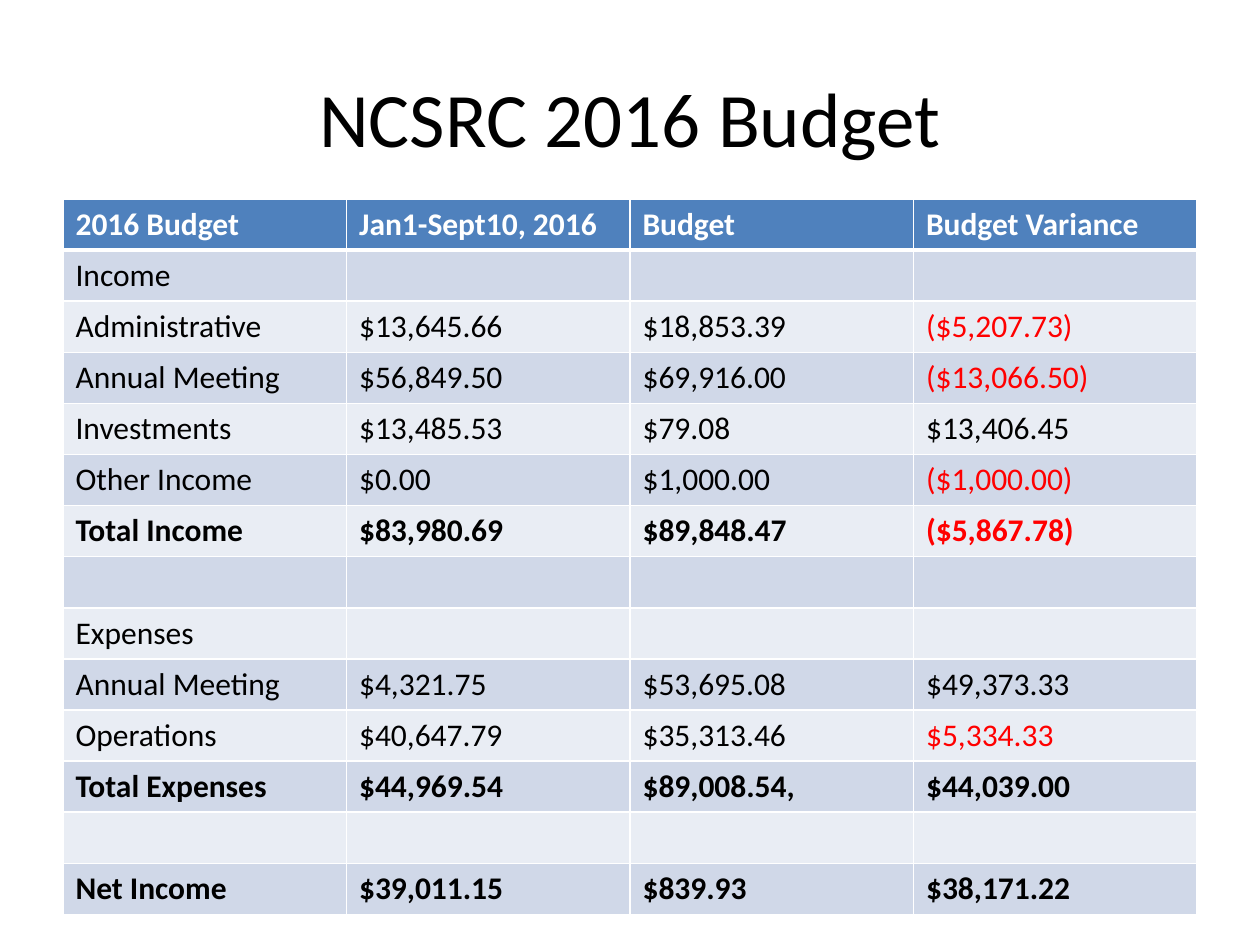
from lxml.etree import SubElement
from pptx import Presentation
from pptx.dml.color import RGBColor
from pptx.enum.text import MSO_ANCHOR, PP_ALIGN
from pptx.oxml.ns import qn
from pptx.util import Emu, Pt

COLORS = {
    "header": "4F81BD",
    "dark_band": "D0D8E8",
    "light_band": "E9EDF4",
    "white": "FFFFFF",
    "black": "000000",
    "red": "FF0000",
}
FONT = "Calibri"
BUDGET = [
    ["2016 Budget", "Jan1-Sept10, 2016", "Budget", "Budget Variance"],
    ["Income", "", "", ""],
    ["Administrative", "$13,645.66", "$18,853.39", "($5,207.73)"],
    ["Annual Meeting", "$56,849.50", "$69,916.00", "($13,066.50)"],
    ["Investments", "$13,485.53", "$79.08", "$13,406.45"],
    ["Other Income", "$0.00", "$1,000.00", "($1,000.00)"],
    ["Total Income", "$83,980.69", "$89,848.47", "($5,867.78)"],
    ["", "", "", ""],
    ["Expenses", "", "", ""],
    ["Annual Meeting", "$4,321.75", "$53,695.08", "$49,373.33"],
    ["Operations", "$40,647.79", "$35,313.46", "$5,334.33"],
    ["Total Expenses", "$44,969.54", "$89,008.54,", "$44,039.00"],
    ["", "", "", ""],
    ["Net Income", "$39,011.15", "$839.93", "$38,171.22"],
]
BOLD_ROWS = ("2016 Budget", "Total Income", "Total Expenses", "Net Income")
OVERSPENT = "$5,334.33"  # red although it has no parentheses


def px(*lengths):
    return [Emu(round(length * 914400 / 126)) for length in lengths]


def add_border(cell, side, points):
    line = SubElement(cell._tc.get_or_add_tcPr(), qn(f"a:ln{side}"), w=str(Pt(points)))
    fill = SubElement(line, qn("a:solidFill"))
    SubElement(fill, qn("a:srgbClr"), val=COLORS["white"])


deck = Presentation()
deck.slide_width, deck.slide_height = px(1260, 945)
page = deck.slides.add_slide(deck.slide_layouts[5])

# Title
title = page.shapes.title
title.left, title.top, title.width, title.height = px(63, 38, 1134, 158)
title.text_frame.text = "NCSRC 2016 Budget"
title.text_frame.vertical_anchor = MSO_ANCHOR.MIDDLE
para = title.text_frame.paragraphs[0]
para.alignment = PP_ALIGN.CENTER
font = para.runs[0].font
font.name, font.size = FONT, Pt(44)
font.color.rgb = RGBColor.from_string(COLORS["black"])

# Budget table: equal columns and rows
table = page.shapes.add_table(len(BUDGET), len(BUDGET[0]), *px(63, 199, 1134, 714)).table
for row, values in enumerate(BUDGET):
    band = "header" if row == 0 else "dark_band" if row % 2 else "light_band"
    for column, value in enumerate(values):
        cell = table.cell(row, column)
        for side in "LRTB":
            header_rule = (row, side) in ((0, "B"), (1, "T"))
            add_border(cell, side, 3 if header_rule else 1)
        cell.fill.solid()
        cell.fill.fore_color.rgb = RGBColor.from_string(COLORS[band])
        if not value:
            continue

        # Cell text: white header, red shortfalls, bold totals
        cell.text_frame.text = value
        font = cell.text_frame.paragraphs[0].runs[0].font
        font.name, font.size = FONT, Pt(18)
        font.bold = values[0] in BOLD_ROWS
        shortfall = value.startswith("(") or value == OVERSPENT
        color = "white" if row == 0 else "red" if shortfall else "black"
        font.color.rgb = RGBColor.from_string(COLORS[color])

deck.save("out.pptx")
